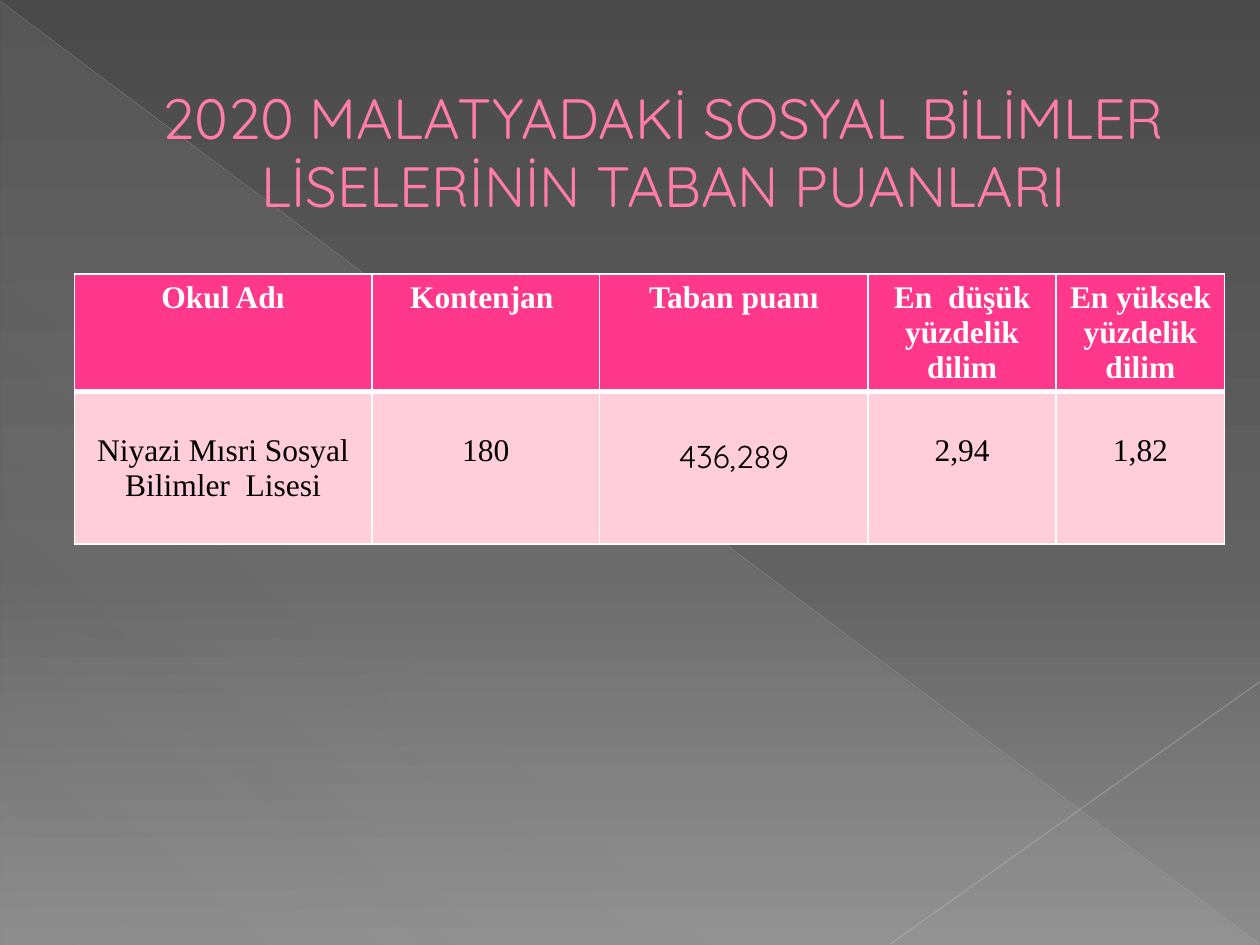
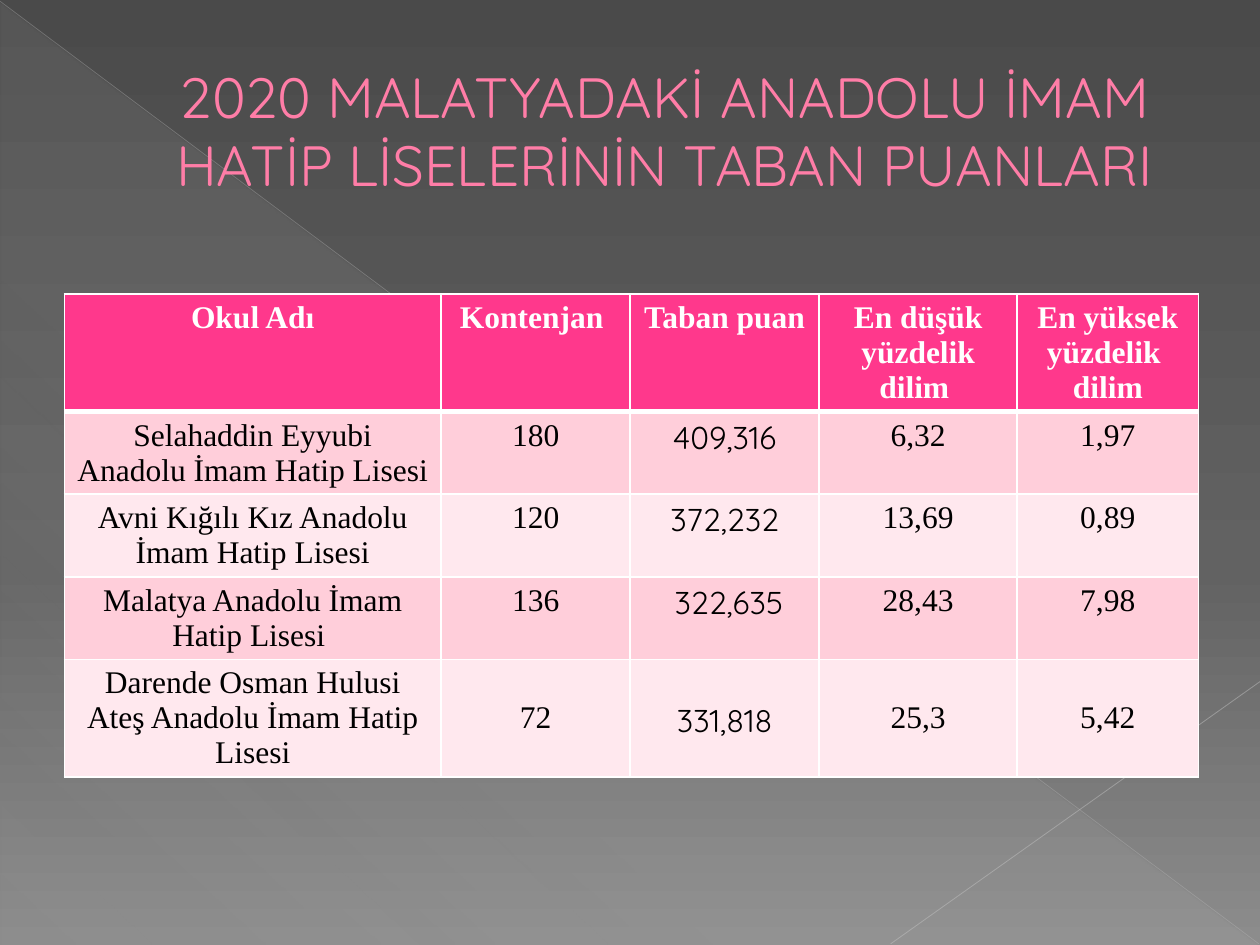
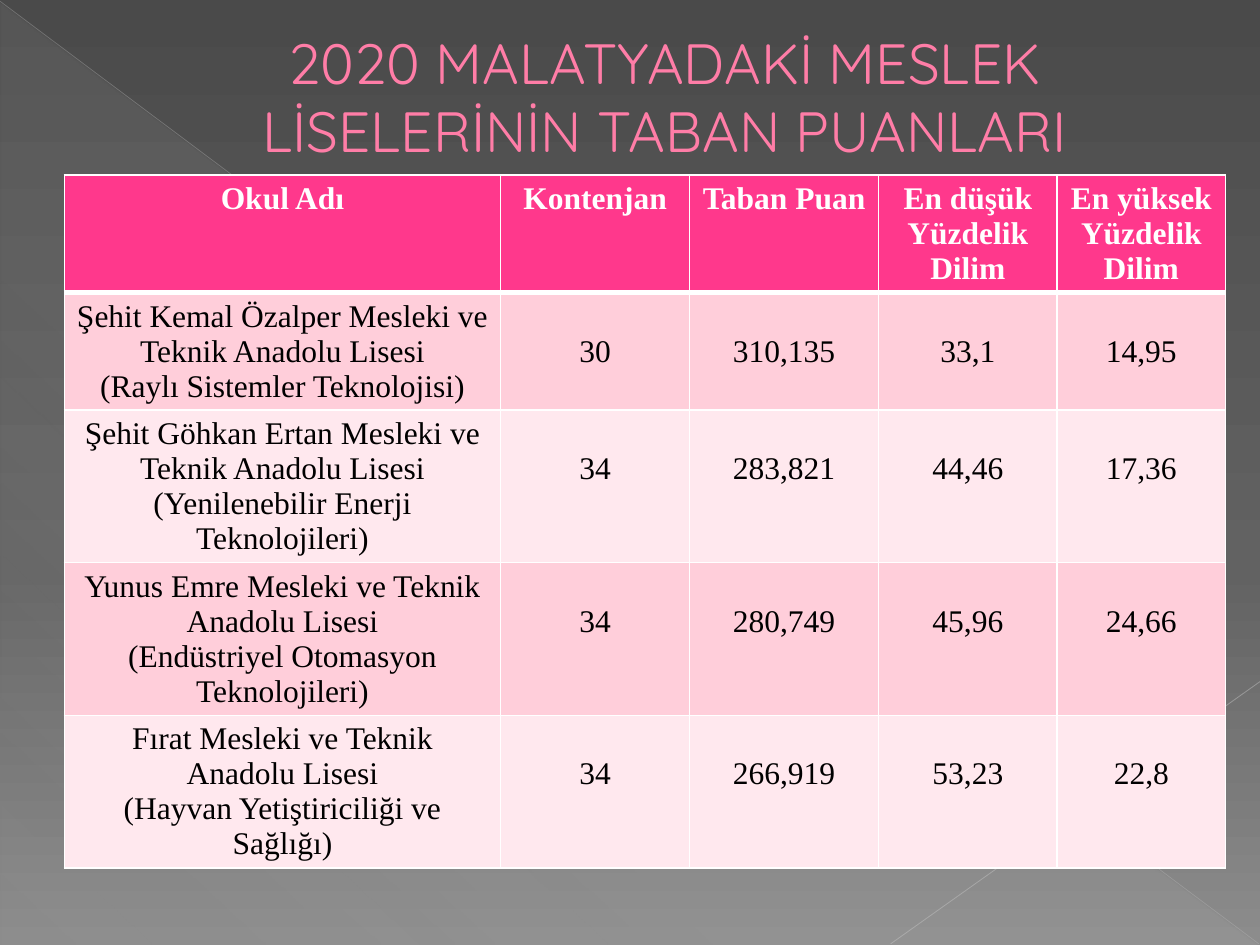
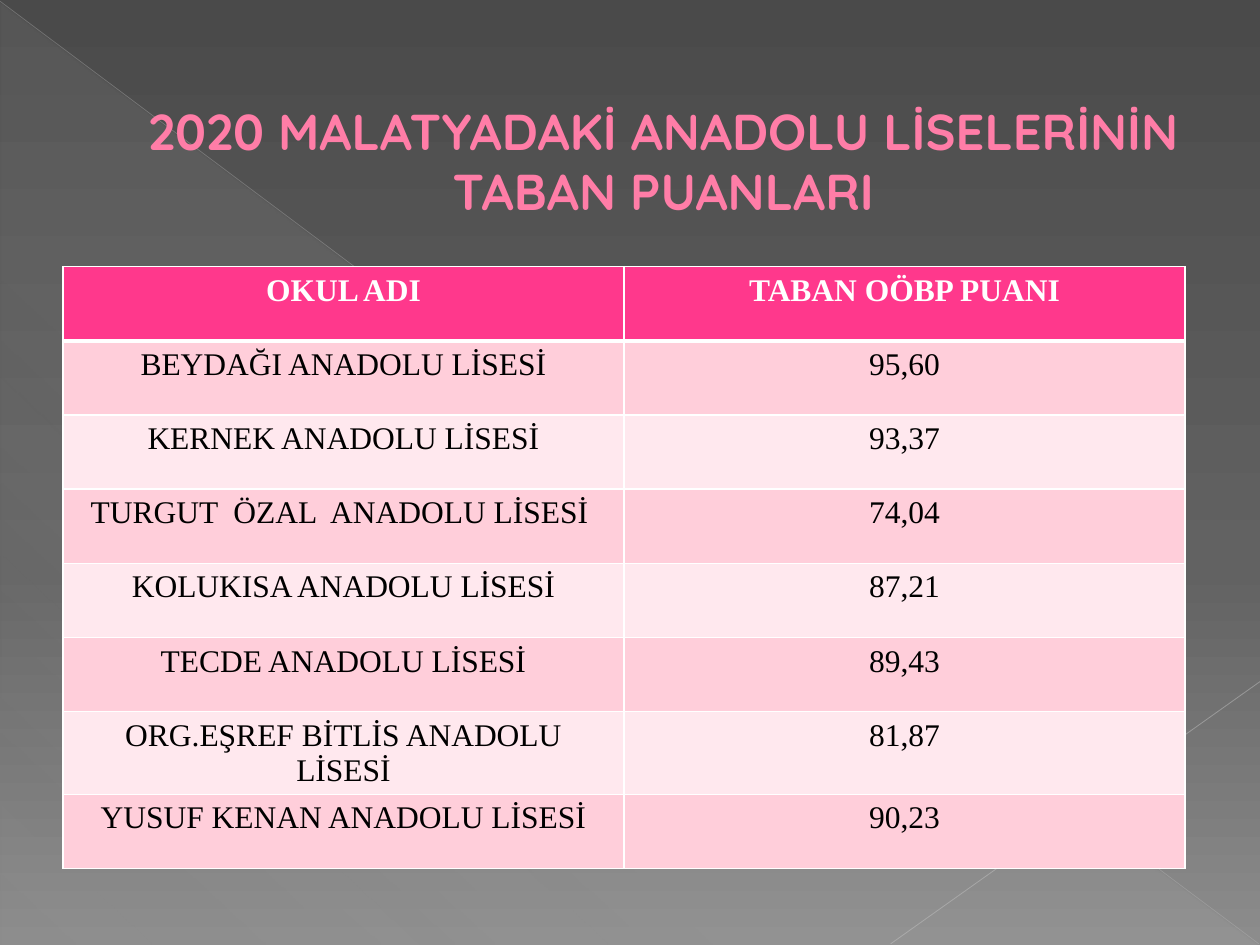
from lxml import etree
from pptx import Presentation
from pptx.dml.color import RGBColor
from pptx.enum import shapes, text
from pptx.oxml import ns
from pptx.util import Pt

PINK, HEADER, OUTLINE = "FF7DA7", "FF388C", "B12761"
BANDS = ("FFCEDA", "FFE8EE")
WHITE, BLACK = "FFFFFF", "000000"
SERIF, ROUNDED = "Times New Roman", "Quicksand"
LINE, PAD, SIDE = 20, 3.6, 6.8
BACKDROP = [(0, "4A4A4A", 100), (60, "626262", 100), (100, "8C8C8C", 100)]
SHEEN = [(0, "D2D2D2", 10), (70, "D2D2D2", 8), (100, "D2D2D2", 1)]
RAYS = [
    ((0, 0.7, 719.3, 539.3), "BFBFBF", 0.39, 35),
    ((720, 389.5, 509, 539.3), "C6C6C6", 0.47, 45),
]


def rgb(value):
    return RGBColor.from_string(value)


def points(values):
    return [Pt(value) for value in values]


def add_node(parent, tag, **attributes):
    node = etree.SubElement(parent, ns.qn(tag))
    for name, value in attributes.items():
        node.set(name, str(value))
    return node


def add_color(parent, value, alpha=100):
    color = add_node(parent, "a:srgbClr", val=value)
    if alpha < 100:
        add_node(color, "a:alpha", val=alpha * 1000)


def fill_gradient(fill, element, stops, angle):
    fill.gradient()
    gradient = next(element.iter(ns.qn("a:gradFill")))
    for child in list(gradient):
        gradient.remove(child)
    stop_list = add_node(gradient, "a:gsLst")
    for position, color, alpha in stops:
        add_color(add_node(stop_list, "a:gs", pos=position * 1000), color, alpha)
    add_node(gradient, "a:lin", ang=angle * 60000, scaled=0)


def line_node(tag, color, width):
    line = etree.Element(ns.qn(tag), w=str(Pt(width)))
    add_color(add_node(line, "a:solidFill"), color)
    return line


def write(para, words, color, **formats):
    para.alignment = text.PP_ALIGN.CENTER
    span = para.add_run()
    span.text = words
    for name, value in formats.items():
        setattr(span.font, name, value)
    span.font.color.rgb = rgb(color)
    return span


def draw_backdrop(page):
    fill_gradient(page.background.fill, page.background._cSld, BACKDROP, 90)
    triangle = page.shapes.add_shape(
        shapes.MSO_SHAPE.RIGHT_TRIANGLE, *points((0.5, 1.4, 718.8, 538.6)))
    triangle.shadow.inherit = False
    fill_gradient(triangle.fill, triangle._element, SHEEN, 133)
    triangle.line.fill.background()
    for ends, color, width, alpha in RAYS:
        ray = page.shapes.add_connector(
            shapes.MSO_CONNECTOR.STRAIGHT, *points(ends))
        ray.line.width = Pt(width)
        ray.line.color.rgb = rgb(color)
        shade = next(ray._element.spPr.iter(ns.qn("a:srgbClr")))
        add_node(shade, "a:alpha", val=alpha * 1000)
        add_node(ray._element.spPr, "a:effectLst")


def draw_title(page, box, words, size=32.4, bold=False):
    frame = page.shapes.add_textbox(*points(box)).text_frame
    frame.word_wrap = True
    frame.vertical_anchor = text.MSO_ANCHOR.MIDDLE
    para = frame.paragraphs[0]
    properties = para._p.get_or_add_pPr()
    for name, value in {"marL": Pt(38), "indent": 0}.items():
        properties.set(name, str(value))
    span = write(para, words, PINK, size=Pt(size), name=ROUNDED, bold=bold)
    span.font._element.insert(0, line_node("a:ln", OUTLINE, 0.5))


def fill_cell(cell, words, row, font, lead):
    header = row == 0
    margins = {"margin_top": PAD + lead, "margin_bottom": 0,
               "margin_left": SIDE, "margin_right": SIDE}
    for name, value in margins.items():
        setattr(cell, name, Pt(value))
    cell.fill.solid()
    cell.fill.fore_color.rgb = rgb(HEADER if header else BANDS[(row - 1) % 2])
    widths = {"a:lnL": 1, "a:lnR": 1, "a:lnT": 3 if row == 1 else 1,
              "a:lnB": 3 if header else 1}
    for order, (tag, width) in enumerate(widths.items()):
        cell._tc.tcPr.insert(order, line_node(tag, WHITE, width))
    frame = cell.text_frame
    for order, part in enumerate(words.split("\n")):
        para = frame.add_paragraph() if order else frame.paragraphs[0]
        para.line_spacing = Pt(LINE)
        write(para, part, WHITE if header else BLACK,
              size=Pt(18), name=font, bold=header)


def draw_table(page, corner, widths, rows, score_font=SERIF, score_shift=0):
    heights = [2 * PAD + LINE * lines for lines, lead, words in rows]
    box = (*corner, sum(widths), sum(heights))
    table = page.shapes.add_table(len(rows), len(widths), *points(box)).table
    for column, width in zip(table.columns, widths):
        column.width = Pt(width)
    for row, (lines, lead, words) in enumerate(rows):
        table.rows[row].height = Pt(heights[row])
        for column, entry in enumerate(words):
            score = row > 0 and column == 2
            gap = lead[column > 0] * LINE + (score_shift if score else 0)
            fill_cell(table.cell(row, column), entry, row,
                      score_font if score else SERIF, gap)


TOP, DROP, DROP_NUMBERS = (0, 0), (1, 1), (0, 1)
SINGLE = 1.76

SLIDES = [
    {
        "title": ((36, 55.4, 648, 61.2),
                  "2020 MALATYADAKİ SOSYAL BİLİMLER LİSELERİNİN TABAN PUANLARI"),
        "corner": (42.5, 156.6),
        "widths": (170, 130.2, 153.3, 107.6, 96.3),
        "score_font": ROUNDED,
        "score_shift": 5,
        "rows": [
            (3, TOP, ("Okul Adı", "Kontenjan ", "Taban puanı",
                      "En  düşük yüzdelik dilim", "En yüksek yüzdelik dilim")),
            (4, DROP, ("Niyazi Mısri Sosyal Bilimler  Lisesi", "180", "436,289",
                       "2,94", "1,82")),
        ],
    },
    {
        "title": ((36.7, 43.4, 648, 61.2),
                  "2020 MALATYADAKİ ANADOLU İMAM HATİP LİSELERİNİN TABAN PUANLARI"),
        "corner": (36.8, 168),
        "widths": (215.3, 108, 108, 113.2, 103.5),
        "score_font": ROUNDED,
        "score_shift": 2.5,
        "rows": [
            (3, TOP, ("Okul Adı", "Kontenjan ", "Taban puan",
                      "En düşük yüzdelik dilim ", "En yüksek yüzdelik  dilim")),
            (2, TOP, ("Selahaddin Eyyubi Anadolu İmam Hatip Lisesi", "180",
                      "409,316", "6,32", "1,97")),
            (2, TOP, ("Avni Kığılı Kız Anadolu İmam Hatip Lisesi", "120",
                      "372,232", "13,69", "0,89")),
            (2, TOP, ("Malatya Anadolu İmam Hatip Lisesi ", "136",
                      " 322,635", "28,43", "7,98")),
            (3, DROP_NUMBERS, ("Darende Osman Hulusi Ateş Anadolu İmam Hatip Lisesi",
                               "72", "331,818", "25,3", "5,42")),
        ],
    },
    {
        "title": ((36.7, 15.1, 648, 79.2),
                  "2020 MALATYADAKİ MESLEK LİSELERİNİN TABAN PUANLARI"),
        "corner": (36.8, 100),
        "widths": (249.3, 108, 108, 102, 96.3),
        "rows": [
            (3, TOP, ("Okul Adı", "Kontenjan", "Taban Puan",
                      "En düşük Yüzdelik Dilim", "En yüksek Yüzdelik Dilim")),
            (3, DROP_NUMBERS, ("Şehit Kemal Özalper Mesleki ve Teknik Anadolu Lisesi\n"
                               "(Raylı Sistemler Teknolojisi)",
                               "30", "310,135", "33,1", "14,95")),
            (4, DROP_NUMBERS, ("Şehit Göhkan Ertan Mesleki ve Teknik Anadolu Lisesi\n"
                               "(Yenilenebilir Enerji Teknolojileri)",
                               "34", "283,821", "44,46", "17,36")),
            (4, DROP_NUMBERS, ("Yunus Emre Mesleki ve Teknik Anadolu Lisesi\n"
                               "(Endüstriyel Otomasyon Teknolojileri)",
                               "34", "280,749", "45,96", "24,66")),
            (4, DROP_NUMBERS, ("Fırat Mesleki ve Teknik Anadolu Lisesi\n"
                               "(Hayvan Yetiştiriciliği ve Sağlığı)",
                               "34", "266,919", "53,23", "22,8")),
        ],
    },
    {
        "title": ((0, 55.4, 720, 72.7),
                  "2020 MALATYADAKİ ANADOLU LİSELERİNİN TABAN PUANLARI", 28.8, True),
        "corner": (36, 152.4),
        "widths": (320.6, 320.6),
        "rows": [
            (SINGLE, TOP, ("OKUL ADI", "TABAN OÖBP PUANI")),
            (SINGLE, TOP, ("BEYDAĞI ANADOLU LİSESİ", "95,60")),
            (SINGLE, TOP, ("KERNEK ANADOLU LİSESİ", "93,37")),
            (SINGLE, TOP, ("TURGUT  ÖZAL  ANADOLU LİSESİ ", "74,04")),
            (SINGLE, TOP, ("KOLUKISA ANADOLU LİSESİ", "87,21")),
            (SINGLE, TOP, ("TECDE ANADOLU LİSESİ", "89,43")),
            (2, TOP, ("ORG.EŞREF BİTLİS ANADOLU LİSESİ", "81,87")),
            (SINGLE, TOP, ("YUSUF KENAN ANADOLU LİSESİ", "90,23")),
        ],
    },
]


def main():
    deck = Presentation()
    deck.slide_width, deck.slide_height = Pt(720), Pt(540)
    for content in SLIDES:
        page = deck.slides.add_slide(deck.slide_layouts[6])
        draw_backdrop(page)
        draw_title(page, *content.pop("title"))
        draw_table(page, **content)
    deck.save("out.pptx")


if __name__ == "__main__":
    main()
